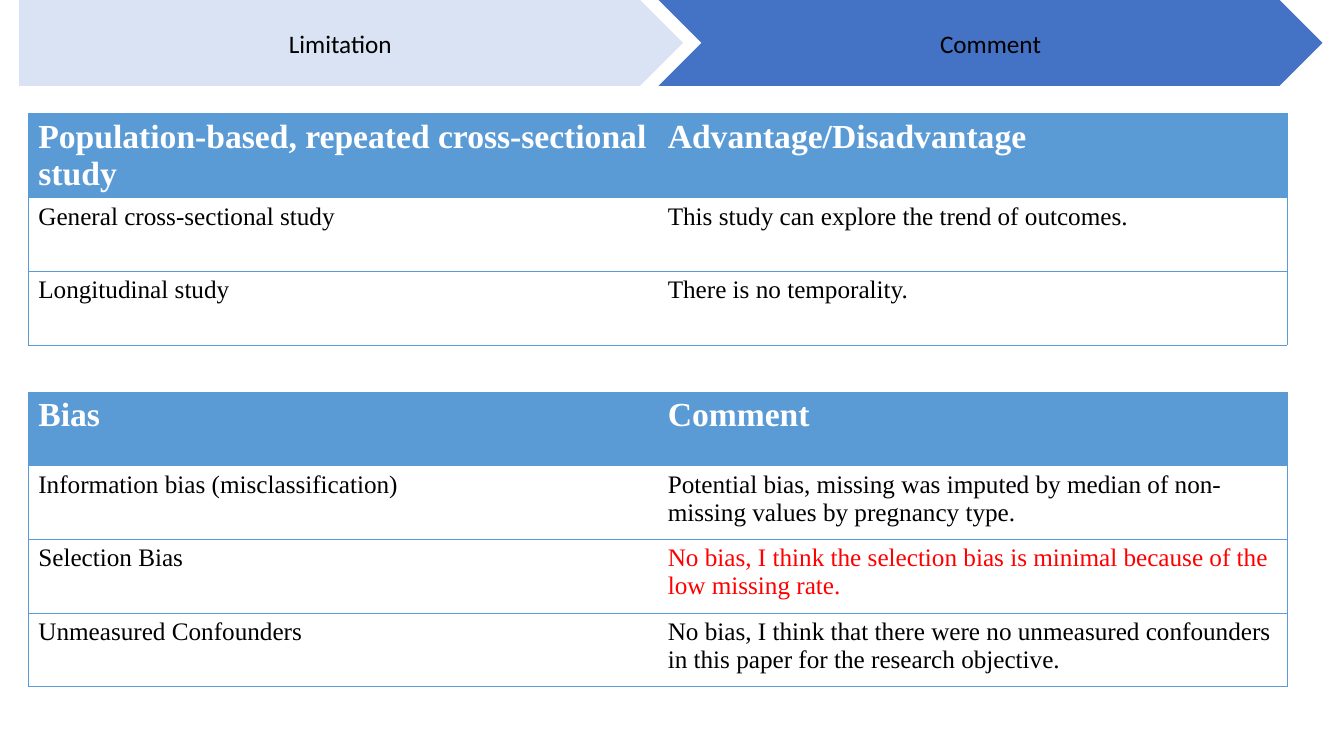
from pptx import Presentation
from pptx.dml.color import RGBColor
from pptx.enum.shapes import MSO_SHAPE as Kind
from pptx.enum.text import MSO_ANCHOR as Anchor, PP_ALIGN as Align
from pptx.oxml import parse_xml
from pptx.oxml.ns import nsdecls
from pptx.util import Pt

# Content
BLUE, BLACK, WHITE, RED = "5B9BD5", "000000", "FFFFFF", "FF0000"
SERIF = "Times New Roman"
ARROWS = [
    ("Limitation", Kind.PENTAGON, "DAE3F3"),
    ("Comment", Kind.CHEVRON, "4472C4"),
]
DESIGN = [
    ("Population-based, repeated cross-sectional study", "Advantage/Disadvantage"),
    ("General cross-sectional study", "This study can explore the trend of outcomes."),
    ("Longitudinal study", "There is no temporality."),
]
MINIMAL = "No bias, I think the selection bias is minimal because of the low missing rate."
BIAS = [
    ("Bias", "Comment"),
    ("Information bias (misclassification)",
     "Potential bias, missing was imputed by median of non-missing values by pregnancy type."),
    ("Selection Bias", MINIMAL),
    ("Unmeasured Confounders",
     "No bias, I think that there were no unmeasured confounders in this paper "
     "for the research objective."),
]
TABLES = [(DESIGN, 80.8), (BIAS, 280)]

# Layout
LEFT, COL, ROW = 20.2, 449.6, 52.65
START, STEP, WIDE, HIGH = 13.6, 456.8, 474.3, 61.4


def color(code):
    return RGBColor.from_string(code)


def style(para, name, size, code, bold=False):
    for run in para.runs:
        font = run.font
        font.name, font.size, font.bold = name, Pt(size), bold
        font.color.rgb = color(code)


def border(cell, sides):
    """Rule the given sides in blue and clear the others."""
    props = cell._tc.get_or_add_tcPr()
    for spot, side in enumerate("LRTB"):
        fill = (f'<a:solidFill><a:srgbClr val="{BLUE}"/></a:solidFill>'
                if side in sides else "<a:noFill/>")
        width = int(Pt(0.5))
        props.insert(spot, parse_xml(
            f'<a:ln{side} {nsdecls("a")} w="{width}">{fill}</a:ln{side}>'))


def add_arrow(slide, num, label, kind, code):
    shape = slide.shapes.add_shape(
        kind, Pt(START + num * STEP), 0, Pt(WIDE), Pt(HIGH))
    shape.shadow.inherit = False
    shape.fill.solid()
    shape.fill.fore_color.rgb = color(code)
    shape.line.fill.background()
    frame = shape.text_frame
    frame.text = label
    frame.vertical_anchor = Anchor.MIDDLE
    para = frame.paragraphs[0]
    para.alignment = Align.CENTER
    style(para, "Calibri", 18, BLACK)


def add_grid(slide, rows, top):
    table = slide.shapes.add_table(
        len(rows), 2, Pt(LEFT), Pt(top), Pt(2 * COL), Pt(len(rows) * ROW)).table
    table.horz_banding = False
    for col in table.columns:
        col.width = Pt(COL)
    for r, row in enumerate(rows):
        table.rows[r].height = Pt(ROW)
        for c, text in enumerate(row):
            cell, head = table.cell(r, c), r == 0
            cell.text = text
            if head:
                cell.fill.solid()
                cell.fill.fore_color.rgb = color(BLUE)
            else:
                cell.fill.background()
            border(cell, "TB" + "LR"[c])
            code = WHITE if head else RED if text == MINIMAL else BLACK
            style(cell.text_frame.paragraphs[0], SERIF, 24 if head else 18, code, head)


def main():
    deck = Presentation()
    deck.slide_width, deck.slide_height = Pt(960), Pt(540)
    slide = deck.slides.add_slide(deck.slide_layouts[6])
    # Header arrows
    for num, arrow in enumerate(ARROWS):
        add_arrow(slide, num, *arrow)
    # Tables
    for rows, top in TABLES:
        add_grid(slide, rows, top)
    deck.save("out.pptx")


if __name__ == "__main__":
    main()
